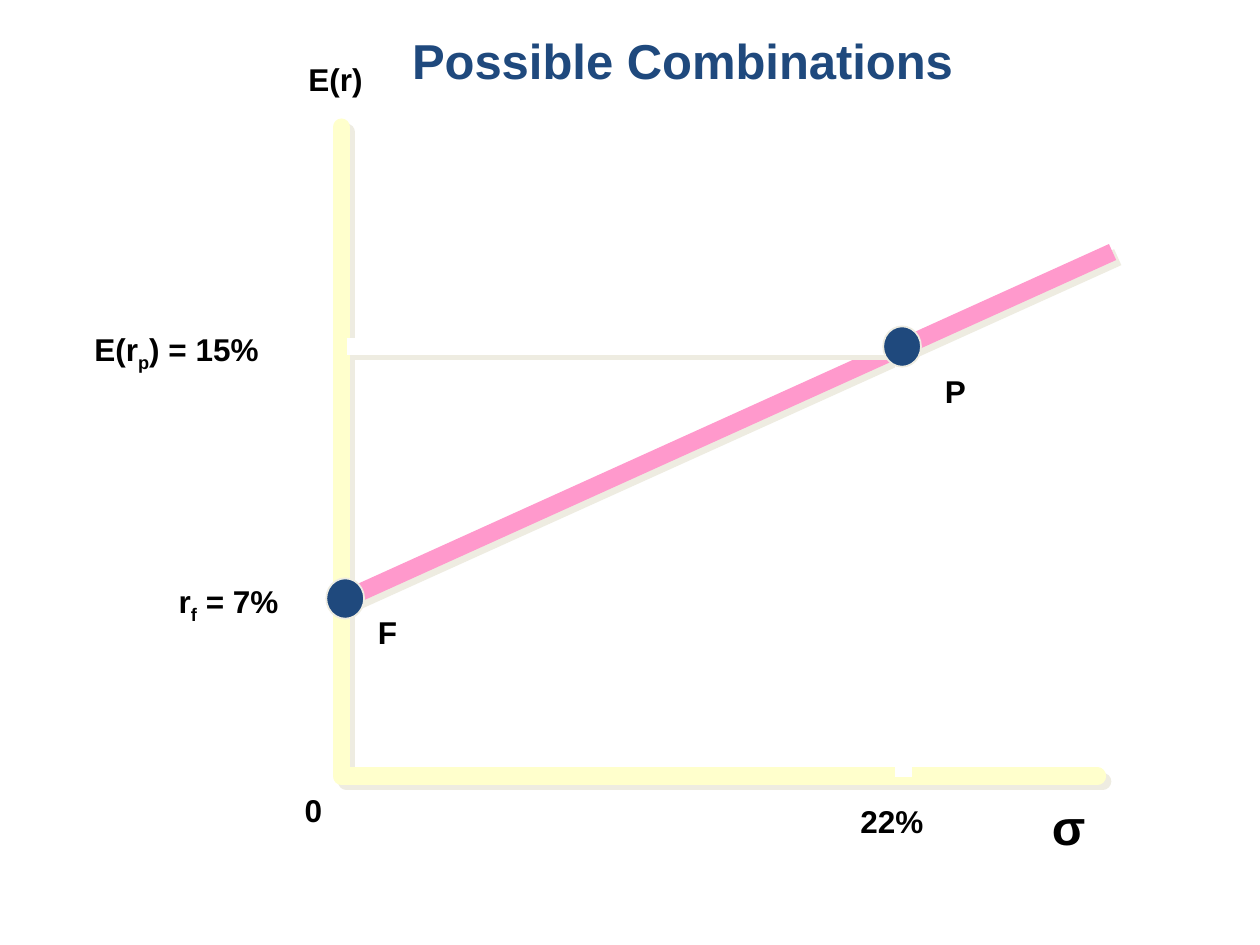
"""Draw the risk and return line joining a risk-free asset to a risky portfolio."""
from dataclasses import dataclass

from lxml.etree import SubElement
from pptx import Presentation
from pptx.dml.color import RGBColor
from pptx.enum.shapes import MSO_CONNECTOR, MSO_SHAPE
from pptx.enum.text import MSO_ANCHOR, MSO_AUTO_SIZE, PP_ALIGN
from pptx.oxml.ns import qn
from pptx.util import Inches, Pt

NAVY, BLACK, WHITE = "1F497D", "000000", "FFFFFF"
YELLOW, PINK, SHADE = "FFFFCC", "FF99CC", "EEECE1"
AXIS_CORNERS = [(2.71, 1.01), (2.71, 6.16), (8.71, 6.16)]
POINT_SIZE = (0.3, 0.32)


@dataclass
class Label:
    """A text box whose second wording, if any, is a subscript."""

    wordings: tuple[str, ...]
    left: float
    top: float
    width: float
    height: float = 0.5
    size: int = 18


@dataclass
class Segment:
    """A thick straight line."""

    start: tuple[float, float]
    end: tuple[float, float]
    color: str
    shadow: bool = True


SEGMENTS = [
    Segment((2.75, 4.75), (8.83, 2), PINK),
    Segment((2.75, 2.75), (7.17, 2.75), WHITE),
    Segment((7.17, 2.67), (7.17, 6.17), WHITE, shadow=False),
]
POINTS = [(7.16, 2.75), (2.74, 4.75)]
LABELS = [
    Label(("E(r)",), 2.35, 0.43, 0.77),
    Label(("E(r", "p", ") = 15%"), 0.65, 2.57, 1.95),
    Label(("r", "f", " = 7%"), 1.32, 4.57, 1.26),
    Label(("22%",), 6.73, 6.32, 0.87),
    Label(("0",), 2.32, 6.23, 0.38),
    Label(("P",), 7.4, 2.9, 0.42),
    Label(("F",), 2.9, 4.82, 0.4),
    Label(("σ",), 8.25, 6.27, 0.75, 0.57, 28),
]


def rgb(color: str) -> RGBColor:
    """Turn a hex string into a colour."""
    return RGBColor.from_string(color)


def set_line(shape, color: str, width: float) -> None:
    """Give a shape or connector a solid line."""
    shape.line.color.rgb = rgb(color)
    shape.line.width = Pt(width)


def set_shadow(shape, visible: bool) -> None:
    """Replace the theme shadow with a hard offset one or with none."""
    effects = SubElement(shape._element.spPr, qn("a:effectLst"))
    if visible:
        outer = SubElement(effects, qn("a:outerShdw"), dist=str(Pt(4.2)), dir="2700000", algn="ctr", rotWithShape="0")
        SubElement(outer, qn("a:srgbClr"), val=SHADE)


def add_axes(page) -> None:
    """Draw both axes as one rounded open outline."""
    first, *rest = [(Inches(x), Inches(y)) for x, y in AXIS_CORNERS]
    builder = page.shapes.build_freeform(*first)
    builder.add_line_segments(rest, close=False)
    axes = builder.convert_to_shape()
    axes.fill.background()
    set_line(axes, YELLOW, 10)
    outline = axes.line._get_or_add_ln()
    outline.set("cap", "rnd")
    SubElement(outline, qn("a:round"))
    set_shadow(axes, True)


def add_segment(page, segment: Segment) -> None:
    """Draw one thick line."""
    ends = [Inches(value) for value in (*segment.start, *segment.end)]
    connector = page.shapes.add_connector(MSO_CONNECTOR.STRAIGHT, *ends)
    set_line(connector, segment.color, 10)
    set_shadow(connector, segment.shadow)


def add_point(page, center: tuple[float, float]) -> None:
    """Draw a dot around its centre."""
    corner = [middle - size / 2 for middle, size in zip(center, POINT_SIZE)]
    dot = page.shapes.add_shape(MSO_SHAPE.OVAL, *[Inches(value) for value in (*corner, *POINT_SIZE)])
    dot.shadow.inherit = False
    dot.fill.solid()
    dot.fill.fore_color.rgb = rgb(NAVY)
    set_line(dot, SHADE, 1)


def add_span(para, text: str, size: int, color: str):
    """Add one bold run and return it."""
    span = para.add_run()
    span.text = text
    for name, value in {"name": "Arial", "size": Pt(size), "bold": True}.items():
        setattr(span.font, name, value)
    span.font.color.rgb = rgb(color)
    return span


def add_label(page, label: Label) -> None:
    """Write one label with its subscript."""
    place = (label.left, label.top, label.width, label.height)
    box = page.shapes.add_textbox(*[Inches(value) for value in place])
    box.text_frame.word_wrap = False
    box.text_frame.auto_size = MSO_AUTO_SIZE.SHAPE_TO_FIT_TEXT
    for index, wording in enumerate(label.wordings):
        span = add_span(box.text_frame.paragraphs[0], wording, label.size, BLACK)
        if index == 1:
            span._r.get_or_add_rPr().set("baseline", "-25000")


def set_title(page, text: str) -> None:
    """Place and format the slide title."""
    title = page.shapes.title
    place = {"left": 3.17, "top": 0.19, "width": 6.25, "height": 0.56}
    for name, value in place.items():
        setattr(title, name, Inches(value))
    frame = title.text_frame
    layout = {"word_wrap": True, "vertical_anchor": MSO_ANCHOR.TOP, "auto_size": MSO_AUTO_SIZE.NONE}
    for name, value in layout.items():
        setattr(frame, name, value)
    para = frame.paragraphs[0]
    para.alignment = PP_ALIGN.LEFT
    add_span(para, text, 28, NAVY)


def main() -> None:
    """Build and save the deck."""
    deck = Presentation()
    deck.slide_width, deck.slide_height = Inches(10), Inches(7.5)
    page = deck.slides.add_slide(deck.slide_layouts[5])
    set_title(page, "Possible Combinations")
    add_axes(page)
    for segment in SEGMENTS:
        add_segment(page, segment)
    for point in POINTS:
        add_point(page, point)
    for label in LABELS:
        add_label(page, label)
    deck.save("out.pptx")


if __name__ == "__main__":
    main()
